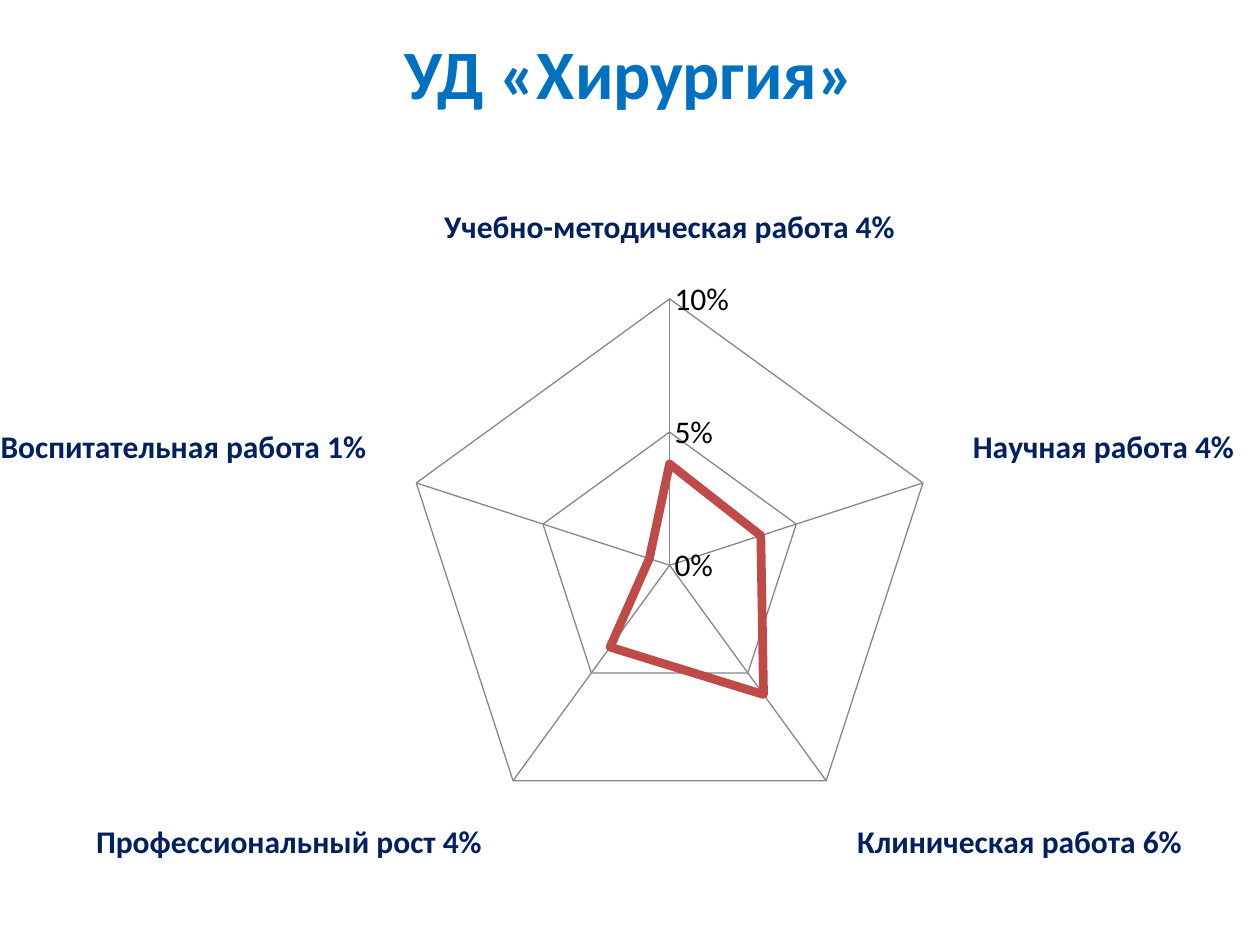
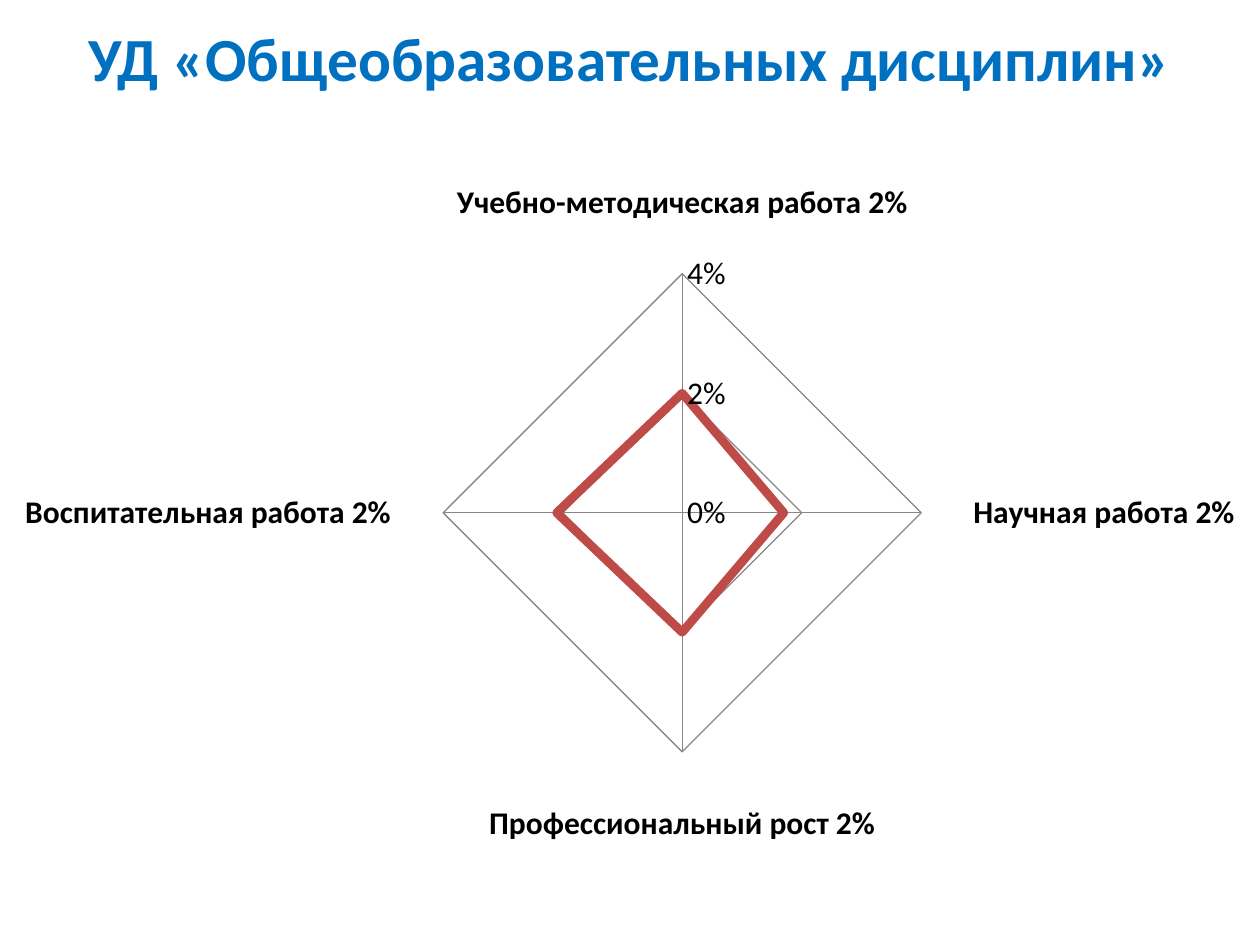
from dataclasses import dataclass

from pptx import Presentation
from pptx.chart.data import CategoryChartData
from pptx.dml.color import RGBColor
from pptx.enum.chart import XL_CHART_TYPE, XL_MARKER_STYLE, XL_TICK_MARK
from pptx.enum.text import MSO_ANCHOR, MSO_AUTO_SIZE, PP_ALIGN
from pptx.presentation import Presentation as Deck
from pptx.slide import Slide
from pptx.util import Inches, Pt

FONT = "Calibri"
TITLE_BLUE = RGBColor(0x00, 0x70, 0xC0)
NAVY = RGBColor(0x00, 0x20, 0x60)
BLACK = RGBColor(0x00, 0x00, 0x00)
RADAR_RED = RGBColor(0xBE, 0x4B, 0x48)
GRID_GREY = RGBColor(0x87, 0x87, 0x87)
TITLE_ONLY = 5


@dataclass(frozen=True)
class Box:
    left: float
    top: float
    width: float
    height: float

    def lengths(self) -> tuple[Inches, ...]:
        return tuple(Inches(n) for n in (self.left, self.top, self.width, self.height))


@dataclass(frozen=True)
class Department:
    title: str
    title_size: float
    title_box: Box
    radar_box: Box
    label_color: RGBColor
    scores: dict[str, float]
    scale_step: float


DEPARTMENTS = [
    Department(
        "УД «Хирургия»", 39.6, Box(0.5, 0.3, 9, 0.54), Box(-0.2, 0.99, 10.2, 6.51), NAVY,
        {
            "Учебно-методическая работа 4%": 0.038,
            "Научная работа 4%": 0.036,
            "Клиническая работа 6%": 0.06,
            "Профессиональный рост 4%": 0.038,
            "Воспитательная работа 1%": 0.008,
        },
        0.05,
    ),
    Department(
        "УД «Общеобразовательных дисциплин»", 35, Box(0, 0, 10, 0.91), Box(0, 0.84, 10, 6.46), BLACK,
        {
            "Учебно-методическая работа 2%": 0.02,
            "Научная работа 2%": 0.017,
            "Профессиональный рост 2%": 0.02,
            "Воспитательная работа 2%": 0.021,
        },
        0.02,
    ),
]


def set_title(slide: Slide, department: Department) -> None:
    title = slide.shapes.title
    title.left, title.top, title.width, title.height = department.title_box.lengths()
    frame = title.text_frame
    frame.text = department.title
    frame.word_wrap = True
    frame.auto_size = MSO_AUTO_SIZE.NONE
    frame.vertical_anchor = MSO_ANCHOR.MIDDLE
    paragraph = frame.paragraphs[0]
    paragraph.alignment = PP_ALIGN.CENTER
    paragraph.font.name = FONT
    paragraph.font.size = Pt(department.title_size)
    paragraph.font.bold = True
    paragraph.font.color.rgb = TITLE_BLUE


def add_radar(slide: Slide, department: Department) -> None:
    data = CategoryChartData(number_format="0%")
    data.categories = department.scores.keys()
    data.add_series("Series 1", department.scores.values())
    chart = slide.shapes.add_chart(
        XL_CHART_TYPE.RADAR, *department.radar_box.lengths(), data
    ).chart
    chart.has_legend = False
    chart.has_title = False
    chart.font.name = FONT
    chart.font.size = Pt(18)
    chart.font.color.rgb = BLACK

    # Score outline
    plot = chart.plots[0]
    plot.vary_by_categories = False
    outline = plot.series[0]
    outline.smooth = False
    outline.marker.style = XL_MARKER_STYLE.NONE
    outline.format.line.color.rgb = RADAR_RED
    outline.format.line.width = Pt(5)

    # Spokes, rings and labels
    spokes, scale = chart.category_axis, chart.value_axis
    for axis in (spokes, scale):
        axis.major_tick_mark = axis.minor_tick_mark = XL_TICK_MARK.NONE
        axis.has_major_gridlines = True
        for line in (axis.format.line, axis.major_gridlines.format.line):
            line.color.rgb = GRID_GREY
            line.width = Pt(0.75)
    labels = spokes.tick_labels.font
    labels.name = FONT
    labels.size = Pt(18)
    labels.bold = True
    labels.color.rgb = department.label_color
    scale.minimum_scale = 0
    scale.maximum_scale = 2 * department.scale_step
    scale.major_unit = department.scale_step
    scale.tick_labels.number_format = "0%"
    scale.tick_labels.number_format_is_linked = False


def add_department(deck: Deck, department: Department) -> None:
    slide = deck.slides.add_slide(deck.slide_layouts[TITLE_ONLY])
    set_title(slide, department)
    add_radar(slide, department)


def main() -> None:
    deck = Presentation()
    deck.slide_width, deck.slide_height = Inches(10), Inches(7.5)
    for department in DEPARTMENTS:
        add_department(deck, department)
    deck.save("out.pptx")


if __name__ == "__main__":
    main()
